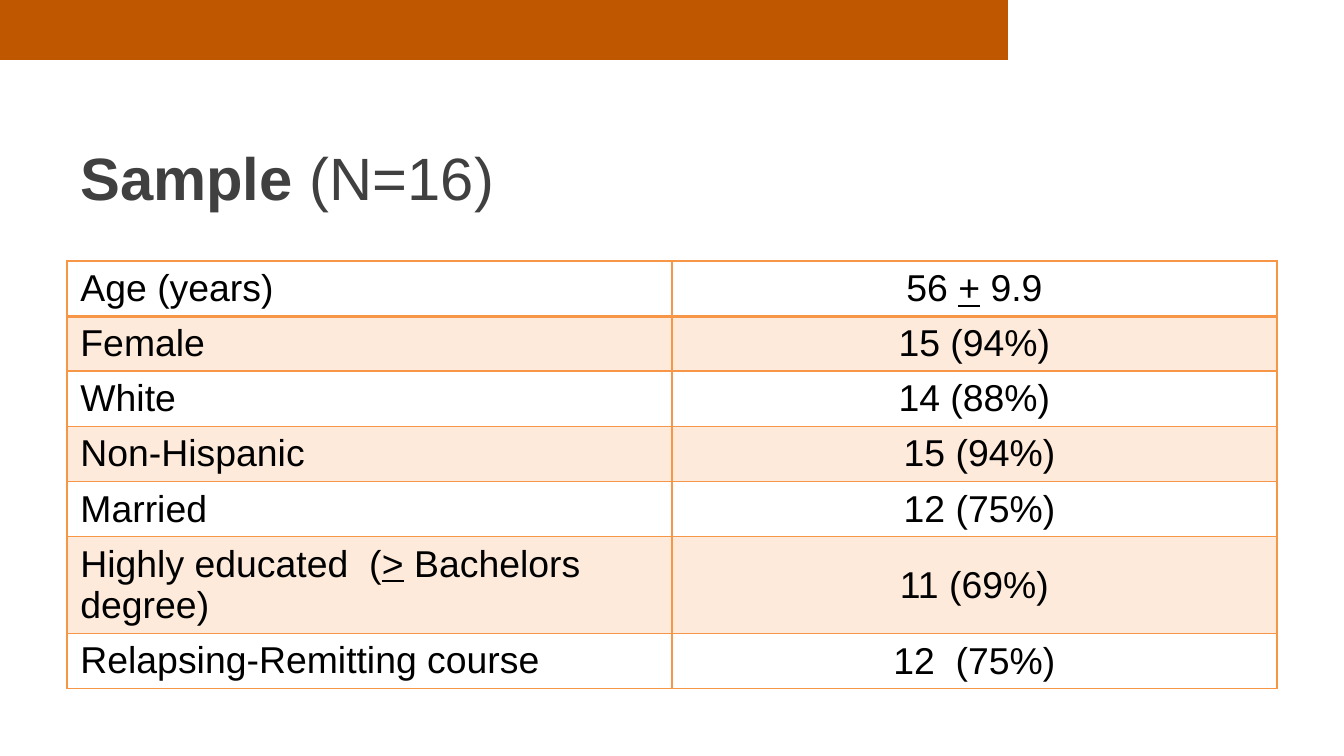
from lxml import etree
from pptx import Presentation
from pptx.dml.color import RGBColor
from pptx.enum.shapes import MSO_SHAPE
from pptx.enum.text import MSO_ANCHOR, PP_ALIGN
from pptx.oxml.ns import qn
from pptx.util import Emu, Pt

RECTANGLE = MSO_SHAPE.RECTANGLE
MIDDLE, TOP = MSO_ANCHOR.MIDDLE, MSO_ANCHOR.TOP
LEFT, CENTER = PP_ALIGN.LEFT, PP_ALIGN.CENTER

PX = 914400 / 134.4
TITLE_ONLY = 5
FONT = "Arial"
BURNT_ORANGE, ORANGE = "BF5700", "F79646"
GRAY, BLACK = "404040", "000000"

# Each cell is a list of (text, underlined) runs
SAMPLE = [
    ([("Age (years)", False)], [("56 ", False), ("+", True), (" 9.9", False)]),
    ([("Female", False)], [("15 (94%)", False)]),
    ([("White", False)], [("14 (88%)", False)]),
    ([("Non-Hispanic", False)], [(" 15 (94%)", False)]),
    ([("Married", False)], [(" 12 (75%)", False)]),
    ([("Highly educated  (", False), (">", True), (" Bachelors degree)", False)],
     [("11 (69%)", False)]),
    ([("Relapsing-Remitting course", False)], [("12  (75%)", False)]),
]


def px(length):
    return Emu(round(length * PX))


def rgb(color):
    return RGBColor.from_string(color)


def add_run(paragraph, text, size, color, bold=False, underline=False):
    run = paragraph.add_run()
    run.text = text
    font = run.font
    font.name, font.size = FONT, Pt(size)
    font.bold, font.underline = bold, underline
    font.color.rgb = rgb(color)


def add_banner(slide):
    banner = slide.shapes.add_shape(RECTANGLE, 0, 0, px(1008), px(60))
    banner.shadow.inherit = False
    banner.fill.solid()
    banner.fill.fore_color.rgb = rgb(BURNT_ORANGE)
    banner.line.fill.background()


def fill_title(slide):
    title = slide.shapes.title
    title.left, title.top = px(67), px(114)
    title.width, title.height = px(1210), px(126)
    title.text_frame.vertical_anchor = MIDDLE
    heading = title.text_frame.paragraphs[0]
    heading.alignment = LEFT
    add_run(heading, "Sample ", 32, GRAY, bold=True)
    add_run(heading, "(N=16)", 32, GRAY)


def set_borders(cell, widths):
    properties = cell._tc.get_or_add_tcPr()
    for side, width in widths.items():
        border = etree.SubElement(properties, qn(f"a:ln{side}"), w=str(Pt(width)))
        solid = etree.SubElement(border, qn("a:solidFill"))
        etree.SubElement(solid, qn("a:srgbClr"), val=ORANGE)


def tint(cell, percent):
    cell.fill.solid()
    cell.fill.fore_color.rgb = rgb(ORANGE)
    color = cell._tc.tcPr.find(f"{qn('a:solidFill')}/{qn('a:srgbClr')}")
    etree.SubElement(color, qn("a:alpha"), val=str(percent * 1000))


def add_sample_table(slide):
    frame = slide.shapes.add_table(len(SAMPLE), 2, px(67), px(261),
                                   px(1210), px(55 * len(SAMPLE)))
    table = frame.table
    table.first_row = table.horz_banding = False
    for column in table.columns:
        column.width = px(605)
    for r, entries in enumerate(SAMPLE):
        table.rows[r].height = px(55)
        for c, runs in enumerate(entries):
            cell = table.cell(r, c)
            cell.vertical_anchor = MIDDLE if c else TOP
            # The rule below the first row is heavier
            set_borders(cell, {"L": 1, "R": 1, "T": 2 if r == 1 else 1,
                               "B": 2 if r == 0 else 1})
            if r % 2:
                tint(cell, 20)
            else:
                cell.fill.background()
            paragraph = cell.text_frame.paragraphs[0]
            paragraph.alignment = CENTER if c else LEFT
            for text, underlined in runs:
                add_run(paragraph, text, 20, BLACK, underline=underlined)


def main():
    deck = Presentation()
    deck.slide_width, deck.slide_height = px(1344), px(756)
    slide = deck.slides.add_slide(deck.slide_layouts[TITLE_ONLY])
    add_banner(slide)
    fill_title(slide)
    add_sample_table(slide)
    deck.save("out.pptx")


if __name__ == "__main__":
    main()
